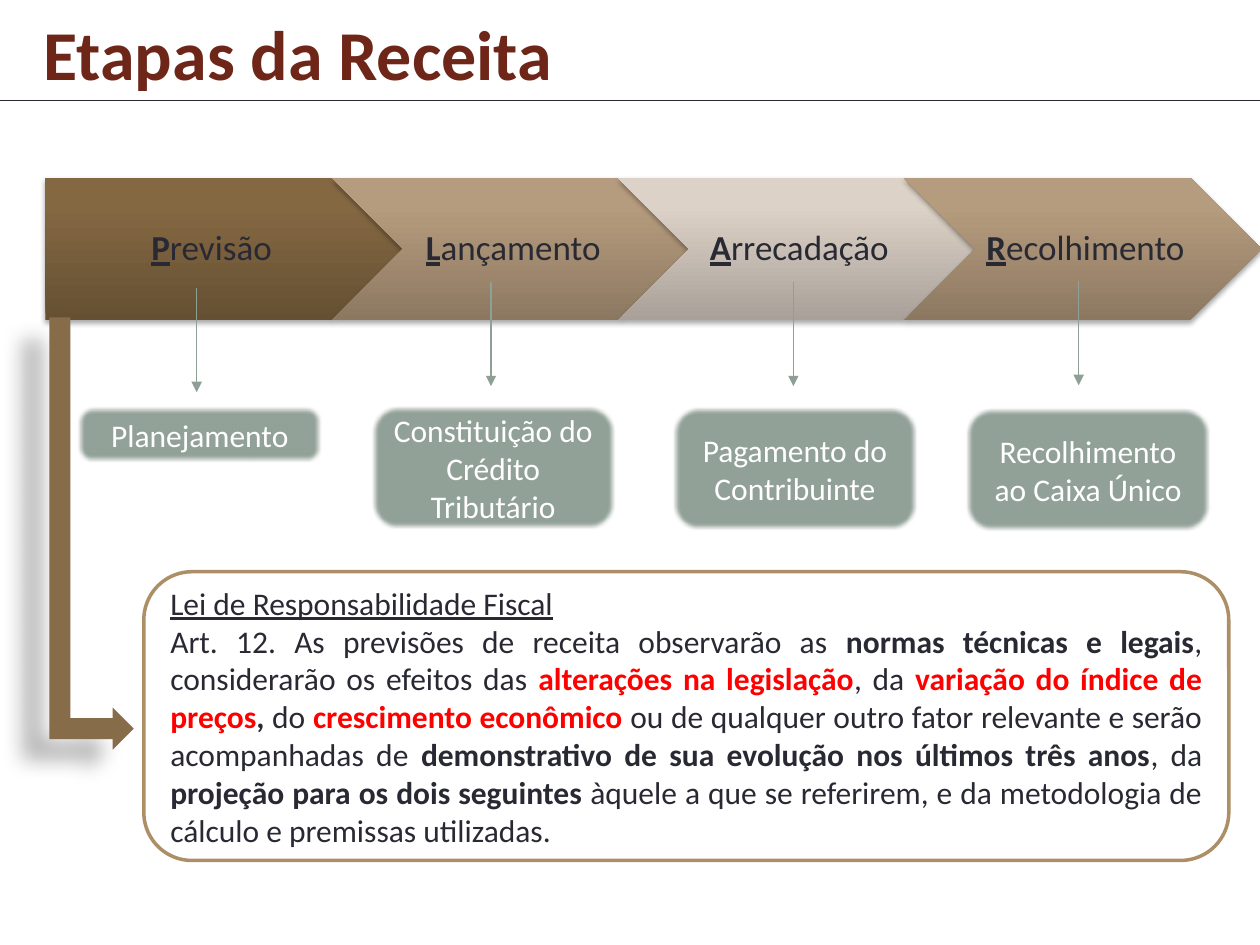
from dataclasses import dataclass

from lxml import etree
from pptx import Presentation
from pptx import util as u
from pptx.dml.color import RGBColor
from pptx.enum import shapes, text
from pptx.oxml import ns

Pt = u.Pt
Shape = shapes.MSO_SHAPE
Align = text.PP_ALIGN
Anchor = text.MSO_ANCHOR


@dataclass(frozen=True)
class Theme:
    font: str = "Calibri"
    title_size: float = 40
    stage_size: float = 20
    body_size: float = 18
    ink: str = "292934"
    title: str = "6E2619"
    accent: str = "FF0000"
    paper: str = "FFFFFF"
    sage: str = "93A299"
    sage_edge: str = "6D7871"
    arrow: str = "8F9F96"
    tan: str = "AD8F67"
    brown: str = "866C49"
    # gradient colours from bottom to top
    dark: tuple = ("655033", "846842", "856841")
    medium: tuple = ("8C7861", "B69C7E", "B89D7E")
    light: tuple = ("A9A199", "DCD2C7", "DDD3C8")


def rgb(code):
    return RGBColor.from_string(code)


def child(parent, tag, **attributes):
    """Append a drawing element to parent and return it."""
    element = etree.SubElement(parent, ns.qn("a:" + tag))
    for name, value in attributes.items():
        element.set(name, str(value))
    return element


class Page:
    def __init__(self, deck, theme):
        self.theme = theme
        self.shapes = deck.slides.add_slide(deck.slide_layouts[6]).shapes

    def fill_text(self, box, paragraphs, size, align, color, anchor=Anchor.MIDDLE):
        """Fill box with paragraphs, each a list of (words, marks, color or None).

        The marks are "b" for bold and "u" for underline.
        """
        frame = box.text_frame
        frame.word_wrap = True
        frame.vertical_anchor = anchor
        for index, spans in enumerate(paragraphs):
            para = frame.paragraphs[0] if index == 0 else frame.add_paragraph()
            para.alignment = align
            para.font.name = self.theme.font
            para.font.size = Pt(size)
            para.font.color.rgb = rgb(color)
            for words, marks, span_color in spans:
                span = para.add_run()
                span.text = words
                if "b" in marks:
                    span.font.bold = True
                if "u" in marks:
                    span.font.underline = True
                if span_color:
                    span.font.color.rgb = rgb(span_color)
        return frame

    def text(self, area, *content, **options):
        box = self.shapes.add_textbox(*map(Pt, area))
        return self.fill_text(box, *content, **options)

    def shape(self, kind, area, fill=None, edge=None):
        box = self.shapes.add_shape(kind, *map(Pt, area))
        box.shadow.inherit = False
        if fill:
            box.fill.solid()
            box.fill.fore_color.rgb = rgb(fill)
        if edge:
            box.line.color.rgb = rgb(edge)
            box.line.width = Pt(2)
        else:
            box.line.fill.background()
        return box

    def shade(self, box, colors):
        box.fill.gradient()
        box.fill.gradient_angle = 90
        stops = box._element.spPr.find(".//" + ns.qn("a:gsLst"))
        for stop in list(stops):
            stops.remove(stop)
        for position, color in zip((0, 80, 100), colors):
            stop = child(stops, "gs", pos=position * 1000)
            child(stop, "srgbClr", val=color)

    def cast_shadow(self, box, opacity, blur, distance, angle):
        effects = box._element.spPr.find(ns.qn("a:effectLst"))
        shadow = child(effects, "outerShdw", blurRad=int(Pt(blur)), dist=int(Pt(distance)),
                       dir=angle * 60000, algn="ctr", rotWithShape=0)
        child(child(shadow, "srgbClr", val="000000"), "alpha", val=opacity * 1000)

    def soften(self, box, radius):
        effects = box._element.spPr.find(ns.qn("a:effectLst"))
        child(effects, "softEdge", rad=int(Pt(radius)))

    def line(self, start, end, color, arrow=False):
        line = self.shapes.add_connector(shapes.MSO_CONNECTOR.STRAIGHT, *map(Pt, start + end))
        line.line.color.rgb = rgb(color)
        line.line.width = Pt(0.75)
        if arrow:
            child(line._element.spPr.find(ns.qn("a:ln")), "tailEnd", type="triangle")
        child(line._element.spPr, "effectLst")

    def stage(self, index, name, colors):
        """Draw one step of the process band, its initial marked."""
        left, top, width, height = 25.9 + 163.5 * index, 101.5, 204.5, 81.5
        first = index == 0
        box = self.shape(Shape.PENTAGON if first else Shape.CHEVRON, (left, top, width, height))
        self.shade(box, colors)
        self.cast_shadow(box, 35, 3.1, 1.8, 90)
        area = (left, top, 183.6, height) if first else (left + 40.5, top, 122.5, height)
        spans = [(name[0], "bu", None), (name[1:], "", None)]
        frame = self.text(area, [spans], self.theme.stage_size, Align.CENTER, self.theme.ink)
        frame.margin_left = Pt(8.6 if first else 6.5)
        frame.margin_right = Pt(2.2)
        frame.margin_top = frame.margin_bottom = Pt(4.3)
        frame.paragraphs[0].line_spacing = 0.9

    def meaning(self, words, left, top, height):
        theme = self.theme
        box = self.shape(Shape.ROUNDED_RECTANGLE, (left, top, 137.5, height),
                         theme.sage, theme.sage_edge)
        self.soften(box, 2.5)
        self.fill_text(box, [[(words, "", None)]], theme.body_size, Align.CENTER, theme.paper)


STAGES = [  # name, meaning, box left, top and height, arrow x and top
    ("Previsão", "Planejamento", (45.4, 233.5, 30), (112.4, 164.6)),
    ("Lançamento", "Constituição do Crédito Tributário", (213.1, 232.8, 69), (280.6, 161.2)),
    ("Arrecadação", "Pagamento do Contribuinte", (385.5, 233.3, 69), (453.4, 161.2)),
    ("Recolhimento", "Recolhimento ao Caixa Único", (553, 234, 69), (616.4, 160.6)),
]


def main():
    deck = Presentation()
    deck.slide_width, deck.slide_height = Pt(720), Pt(540)
    theme = Theme()
    page = Page(deck, theme)

    page.line((0, 57.3), (720, 57.3), theme.ink)
    title = page.text((18, 2.2, 308, 55.4), [[("Etapas da Receita", "b", None)]],
                      theme.title_size, Align.LEFT, theme.title, anchor=Anchor.TOP)
    title.word_wrap = False

    tones = (theme.dark, theme.medium, theme.light, theme.medium)
    for index, ((name, words, place, (x, y)), tone) in enumerate(zip(STAGES, tones)):
        page.stage(index, name, tone)
        page.meaning(words, *place)
        page.line((x, y), (x, y + 59.5), theme.arrow, arrow=True)

    red = theme.accent
    law = page.shape(Shape.ROUNDED_RECTANGLE, (82.2, 326.7, 620, 165), theme.paper, theme.tan)
    page.fill_text(law, [
        [("Lei de Responsabilidade Fiscal", "u", None)],
        [("Art. 12. As previsões de receita observarão as ", "", None),
         ("normas técnicas e legais", "b", None),
         (", considerarão os efeitos das ", "", None),
         ("alterações na legislação", "b", red),
         (", da ", "", None),
         ("variação do índice de preços", "b", red),
         (",", "b", None),
         (" do ", "", None),
         ("crescimento econômico ", "b", red),
         ("ou de qualquer outro fator relevante e serão acompanhadas de ", "", None),
         ("demonstrativo de sua evolução nos últimos três anos", "b", None),
         (", da ", "", None),
         ("projeção para os dois seguintes ", "b", None),
         ("àquele a que se referirem, e da metodologia de cálculo e premissas utilizadas.",
          "", None)],
    ], theme.body_size, Align.JUSTIFY, theme.ink)

    bend = page.shape(Shape.BENT_UP_ARROW, (-71.2, 280.8, 247, 48.2), theme.brown)
    bend.rotation = 90
    page.cast_shadow(bend, 28, 11.8, 19.7, 141)

    deck.save("out.pptx")


if __name__ == "__main__":
    main()
